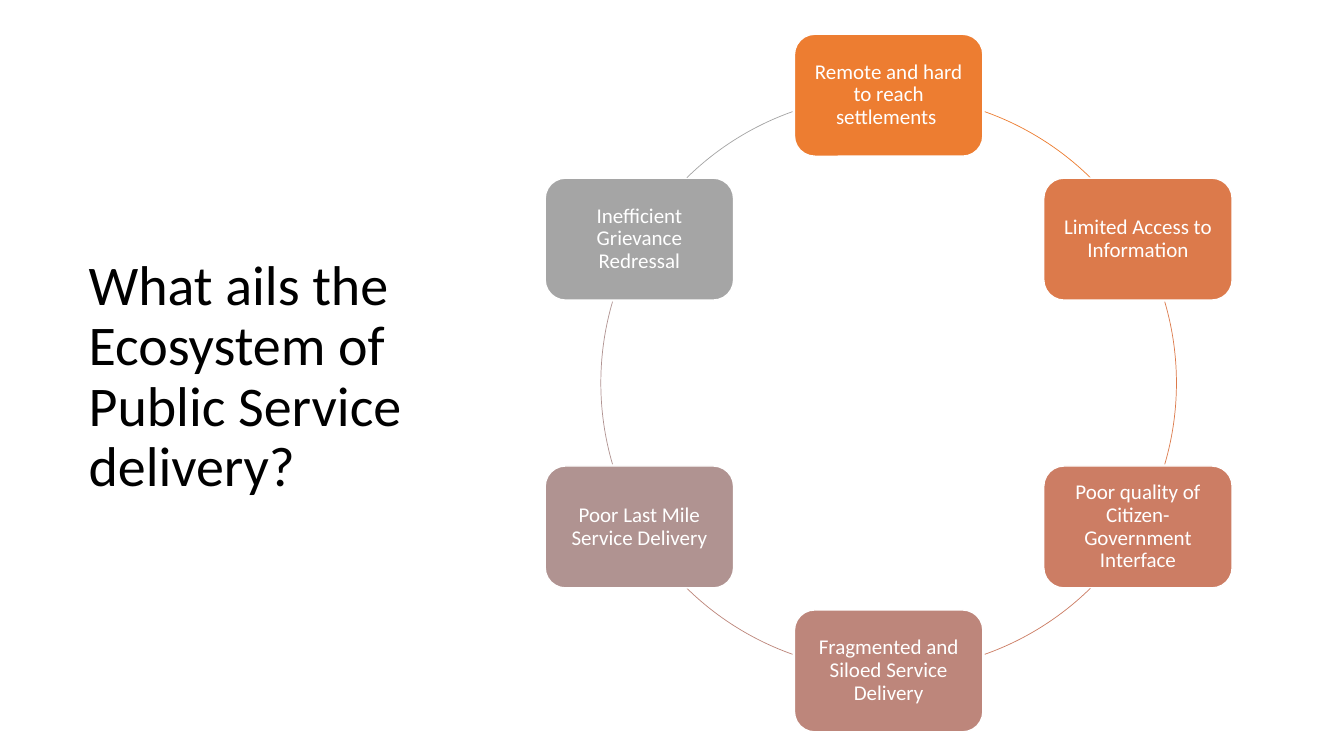
import math

import pptx
import pptx.dml.color
import pptx.enum.shapes
import pptx.enum.text
import pptx.util

Pt = pptx.util.Pt
SHAPE = pptx.enum.shapes.MSO_SHAPE
ALIGN = pptx.enum.text.PP_ALIGN
MIDDLE = pptx.enum.text.MSO_ANCHOR.MIDDLE

CENTER_X, CENTER_Y, RADIUS = 634.8, 273.6, 205.6
BOX_W, BOX_H = 134.6, 87.1

# Text, colour, then start and end angle of the arc that follows (clockwise from 3 o'clock)
CAUSES = [
    ("Remote and hard to reach settlements ", "ED7D31", 289.5, 314.5),
    ("Limited Access to Information", "DC7A4B", 343.6, 16.4),
    ("Poor quality of Citizen-Government Interface", "CC7D64", 45.5, 70.5),
    ("Fragmented and Siloed Service Delivery", "BD867B", 109.5, 134.5),
    ("Poor Last Mile Service Delivery", "B09391", 163.6, 196.4),
    ("Inefficient Grievance Redressal", "A5A5A5", 225.5, 250.5),
]


def rgb(value):
    return pptx.dml.color.RGBColor.from_string(value)


def write(sp, text, size, color, font, align=ALIGN.LEFT, inset_x=7.2, inset_y=3.6):
    tf = sp.text_frame
    tf.word_wrap = True
    tf.vertical_anchor = MIDDLE
    tf.margin_left = tf.margin_right = Pt(inset_x)
    tf.margin_top = tf.margin_bottom = Pt(inset_y)
    p = tf.paragraphs[0]
    p.alignment = align
    p.line_spacing = 0.9
    r = p.add_run()
    r.text = text
    r.font.size = Pt(size)
    r.font.name = font
    r.font.color.rgb = rgb(color)


class CycleSlide:
    font = "Calibri"

    def __init__(self, prs):
        self.s = prs.slides.add_slide(prs.slide_layouts[6])

    def title(self, text, x, y, w, h):
        sp = self.s.shapes.add_textbox(Pt(x), Pt(y), Pt(w), Pt(h))
        write(sp, text, 40, "000000", self.font)

    def box(self, text, color, x, y):
        """Rounded box centred on (x, y)."""
        sp = self.s.shapes.add_shape(SHAPE.ROUNDED_RECTANGLE, Pt(x - BOX_W / 2),
                                     Pt(y - BOX_H / 2), Pt(BOX_W), Pt(BOX_H))
        sp.shadow.inherit = False
        sp.fill.solid()
        sp.fill.fore_color.rgb = rgb(color)
        sp.line.color.rgb = rgb("FFFFFF")
        sp.line.width = Pt(1)
        write(sp, text, 15, "FFFFFF", self.font, ALIGN.CENTER, 4.5, 4.5)

    def arc(self, color, start, end):
        """Part of the ring between two angles in degrees."""
        sp = self.s.shapes.add_shape(SHAPE.ARC, Pt(CENTER_X - RADIUS), Pt(CENTER_Y - RADIUS),
                                     Pt(2 * RADIUS), Pt(2 * RADIUS))
        sp.shadow.inherit = False
        # Arc angles count 60000 per degree; adjustments are scaled by 100000
        sp.adjustments[0] = start * 0.6
        sp.adjustments[1] = end * 0.6
        sp.fill.background()
        sp.line.color.rgb = rgb(color)
        sp.line.width = Pt(0.5)


def main():
    prs = pptx.Presentation()
    prs.slide_width, prs.slide_height = Pt(960), Pt(540)
    slide = CycleSlide(prs)
    slide.title("What ails the Ecosystem of Public Service delivery?", 56.2, 177.8, 296.6, 184.3)
    for i, (text, color, start, end) in enumerate(CAUSES):
        angle = math.radians(i * 360 / len(CAUSES) - 90)
        slide.box(text, color, CENTER_X + RADIUS * math.cos(angle),
                  CENTER_Y + RADIUS * math.sin(angle))
        slide.arc(color, start, end)
    prs.save("out.pptx")


if __name__ == "__main__":
    main()
